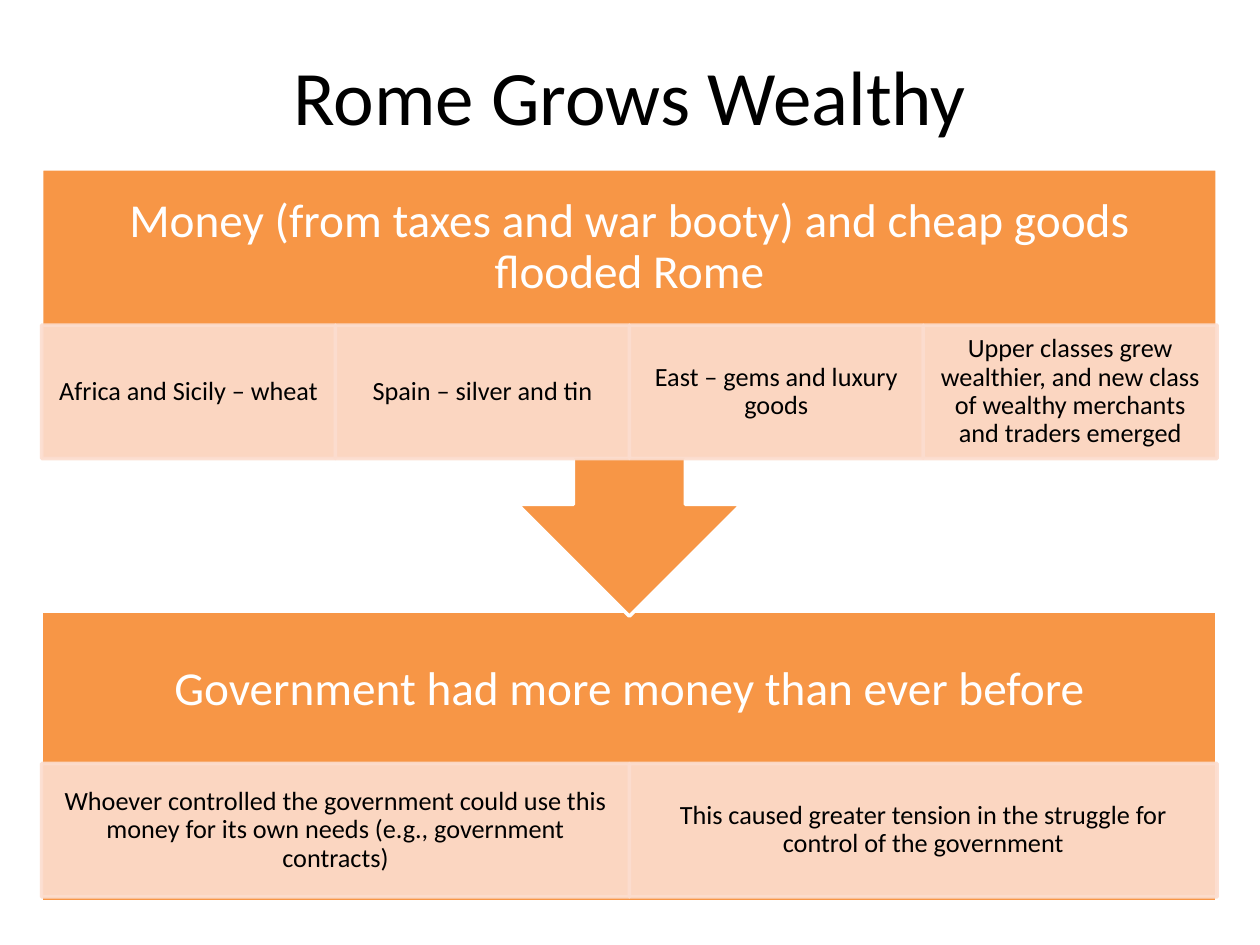
from lxml import etree
from pptx import Presentation
from pptx import util as u
from pptx.dml.color import RGBColor
from pptx.enum import shapes, text
from pptx.oxml.ns import qn

COLORS = {"orange": "F79646", "peach": "FCDDCF", "white": "FFFFFF", "black": "000000"}
FONT = "Calibri"
LEFT, WIDTH = 0.33, 9.33
HEADING_HEIGHT, CELL_HEIGHT = 1.25, 1.06

HEADING = {"size": 27, "color": "white", "spacing": 0.9, "margins": (0.21, 0.21)}
CELL = {"size": 15, "color": "black", "spacing": 0.9, "margins": (0.12, 0.02)}
TITLE = {"size": 44, "color": "black", "spacing": 1.0, "margins": (0.1, 0.05)}


def rgb(name):
    return RGBColor.from_string(COLORS[name])


def write(shape, words, style):
    frame = shape.text_frame
    across, down = (u.Inches(margin) for margin in style["margins"])
    frame_format = {
        "word_wrap": True,
        "auto_size": text.MSO_AUTO_SIZE.NONE,
        "vertical_anchor": text.MSO_ANCHOR.MIDDLE,
        "margin_left": across, "margin_right": across,
        "margin_top": down, "margin_bottom": down,
    }
    for name, value in frame_format.items():
        setattr(frame, name, value)
    paragraph = frame.paragraphs[0]
    paragraph.alignment = text.PP_ALIGN.CENTER
    paragraph.line_spacing = style["spacing"]
    run = paragraph.add_run()
    run.text = words
    for name, value in {"name": FONT, "size": u.Pt(style["size"])}.items():
        setattr(run.font, name, value)
    run.font.color.rgb = rgb(style["color"])


def add_block(slide, kind, box, fill, line):
    shape = slide.shapes.add_shape(kind, *map(u.Inches, box))
    shape.shadow.inherit = False
    shape.fill.solid()
    shape.fill.fore_color.rgb = rgb(fill)
    shape.line.color.rgb = rgb(line)
    shape.line.width = u.Pt(2)
    return shape


def set_opacity(shape, percent):
    """Apply the opacity to both the fill and the outline."""
    for color in shape._element.spPr.iter(qn("a:srgbClr")):
        etree.SubElement(color, qn("a:alpha")).set("val", str(percent * 1000))


def add_heading(slide, top, words):
    box = (LEFT, top, WIDTH, HEADING_HEIGHT)
    write(slide.shapes.add_textbox(*map(u.Inches, box)), words, HEADING)


def add_cells(slide, top, entries):
    width = WIDTH / len(entries)
    for index, words in enumerate(entries):
        box = (LEFT + index * width, top, width, CELL_HEIGHT)
        cell = add_block(slide, shapes.MSO_SHAPE.RECTANGLE, box, "peach", "peach")
        set_opacity(cell, 90)
        write(cell, words, CELL)


def add_stage(slide, kind, top, height, heading, cells_top, entries, rotation=0):
    """Add an orange block with its heading and a row of equal cells."""
    block = add_block(slide, kind, (LEFT, top, WIDTH, height), "orange", "white")
    block.rotation = rotation
    add_heading(slide, top, heading)
    add_cells(slide, cells_top, entries)


def add_title(slide, words):
    title = slide.shapes.title
    place = {"left": 0.5, "top": 0.25, "width": 9, "height": 1}
    for name, value in place.items():
        setattr(title, name, u.Inches(value))
    write(title, words, TITLE)


def main():
    presentation = Presentation()
    presentation.slide_width = u.Inches(10)
    presentation.slide_height = u.Inches(7.5)
    slide = presentation.slides.add_slide(presentation.slide_layouts[5])

    add_title(slide, "Rome Grows Wealthy")
    add_stage(
        slide, shapes.MSO_SHAPE.RECTANGLE, 4.85, 2.31,
        "Government had more money than ever before", 6.06,
        ["Whoever controlled the government could use this money for its own needs "
         "(e.g., government contracts)",
         "This caused greater tension in the struggle for control of the government"],
    )
    add_stage(
        slide, shapes.MSO_SHAPE.UP_ARROW_CALLOUT, 1.34, 3.55,
        "Money (from taxes and war booty) and cheap goods flooded Rome", 2.58,
        ["Africa and Sicily – wheat",
         "Spain – silver and tin",
         "East – gems and luxury goods",
         "Upper classes grew wealthier, and new class of wealthy merchants "
         "and traders emerged"],
        rotation=180,
    )
    presentation.save("out.pptx")


if __name__ == "__main__":
    main()
